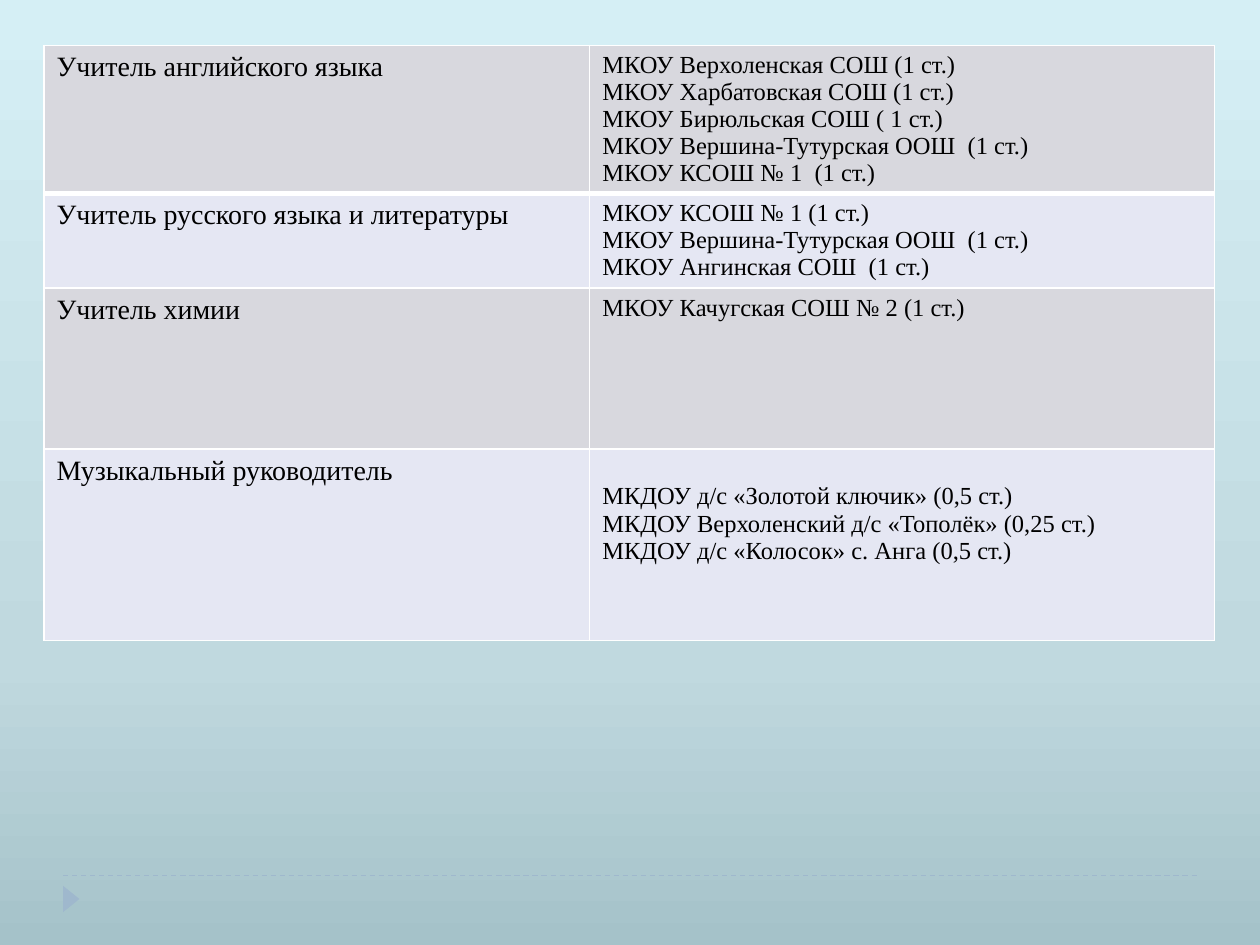
from lxml.etree import SubElement as Sub
from pptx import Presentation
from pptx.dml.color import RGBColor
from pptx.enum.dml import MSO_LINE
from pptx.enum.shapes import MSO_CONNECTOR, MSO_SHAPE
from pptx.oxml.ns import qn
from pptx.util import Inches, Pt

FONT = "Times New Roman"
ACCENT = "9FB8CD"
BANDS = ["D8D8DE", "E5E7F3"]
GRADIENT = [(0, "A5C2C9"), (30, "C0D9DF"), (100, "D5EFF5")]
COLS = [4.33, 4.96]
ROWS = [1.17, 0.75, 1.28, 1.52]
SIZES = [16, 14]
VACANCIES = [
    ("Учитель английского языка", [
        "МКОУ Верхоленская СОШ (1 ст.)",
        "МКОУ Харбатовская СОШ (1 ст.)",
        "МКОУ Бирюльская СОШ ( 1 ст.)",
        "МКОУ Вершина-Тутурская ООШ  (1 ст.)",
        "МКОУ КСОШ № 1  (1 ст.)"]),
    ("Учитель русского языка и литературы", [
        "МКОУ КСОШ № 1 (1 ст.)",
        "МКОУ Вершина-Тутурская ООШ  (1 ст.)",
        "МКОУ Ангинская СОШ  (1 ст.)"]),
    ("Учитель химии", ["МКОУ Качугская СОШ № 2 (1 ст.)"]),
    ("Музыкальный руководитель", [
        "МКДОУ д/с «Золотой ключик» (0,5 ст.)",
        "МКДОУ Верхоленский д/с «Тополёк» (0,25 ст.)",
        "МКДОУ д/с «Колосок» с. Анга (0,5 ст.)"]),
]


def rgb(color):
    return RGBColor.from_string(color)


def add_border(cell, side, width):
    ln = Sub(cell._tc.get_or_add_tcPr(), qn(f"a:ln{side}"), w=str(Pt(width)))
    Sub(Sub(ln, qn("a:solidFill")), qn("a:srgbClr"), val="FFFFFF")


prs = Presentation()
prs.slide_width, prs.slide_height = Inches(10), Inches(7.5)
s = prs.slides.add_slide(prs.slide_layouts[6])

# Background: dark at the bottom, light at the top
fill = s.background.fill
fill.gradient()
fill.gradient_angle = 90
stops = s._element.find(".//" + qn("a:gsLst"))
stops.clear()
for share, color in GRADIENT:
    stop = Sub(stops, qn("a:gs"), pos=str(share * 1000))
    Sub(stop, qn("a:srgbClr"), val=color)

# Footer rule and marker
rule = s.shapes.add_connector(MSO_CONNECTOR.STRAIGHT, Inches(0.5), Inches(6.95),
                              Inches(9.5), Inches(6.95))
rule.line.color.rgb = rgb(ACCENT)
rule.line.width = Pt(0.75)
rule.line.dash_style = MSO_LINE.DASH
Sub(rule._element.spPr, qn("a:effectLst"))

marker = s.shapes.add_shape(MSO_SHAPE.ISOSCELES_TRIANGLE, Inches(0.46), Inches(7.07),
                            Inches(0.21), Inches(0.13))
marker.rotation = 90
marker.shadow.inherit = False
marker.fill.solid()
marker.fill.fore_color.rgb = rgb(ACCENT)
marker.line.fill.background()

# Vacancies: position on the left, schools on the right
table = s.shapes.add_table(len(ROWS), len(COLS), Inches(0.35), Inches(0.36),
                           Inches(sum(COLS)), Inches(sum(ROWS))).table
table.first_row = False
for column, width in zip(table.columns, COLS):
    column.width = Inches(width)
for i, (position, schools) in enumerate(VACANCIES):
    table.rows[i].height = Inches(ROWS[i])
    for j, lines in enumerate([[position], schools]):
        cell = table.cell(i, j)
        for side in "LRTB":
            heavy = (i, side) in [(0, "B"), (1, "T")]
            add_border(cell, side, 3 if heavy else 1)
        cell.fill.solid()
        cell.fill.fore_color.rgb = rgb(BANDS[i % 2])
        tf = cell.text_frame
        tf.text = "\n".join(lines)
        for p in tf.paragraphs:
            font = p.runs[0].font
            for name, value in {"name": FONT, "size": Pt(SIZES[j])}.items():
                setattr(font, name, value)
            font.color.rgb = rgb("000000")
table.cell(3, 1).margin_top = Inches(0.27)

prs.save("out.pptx")
